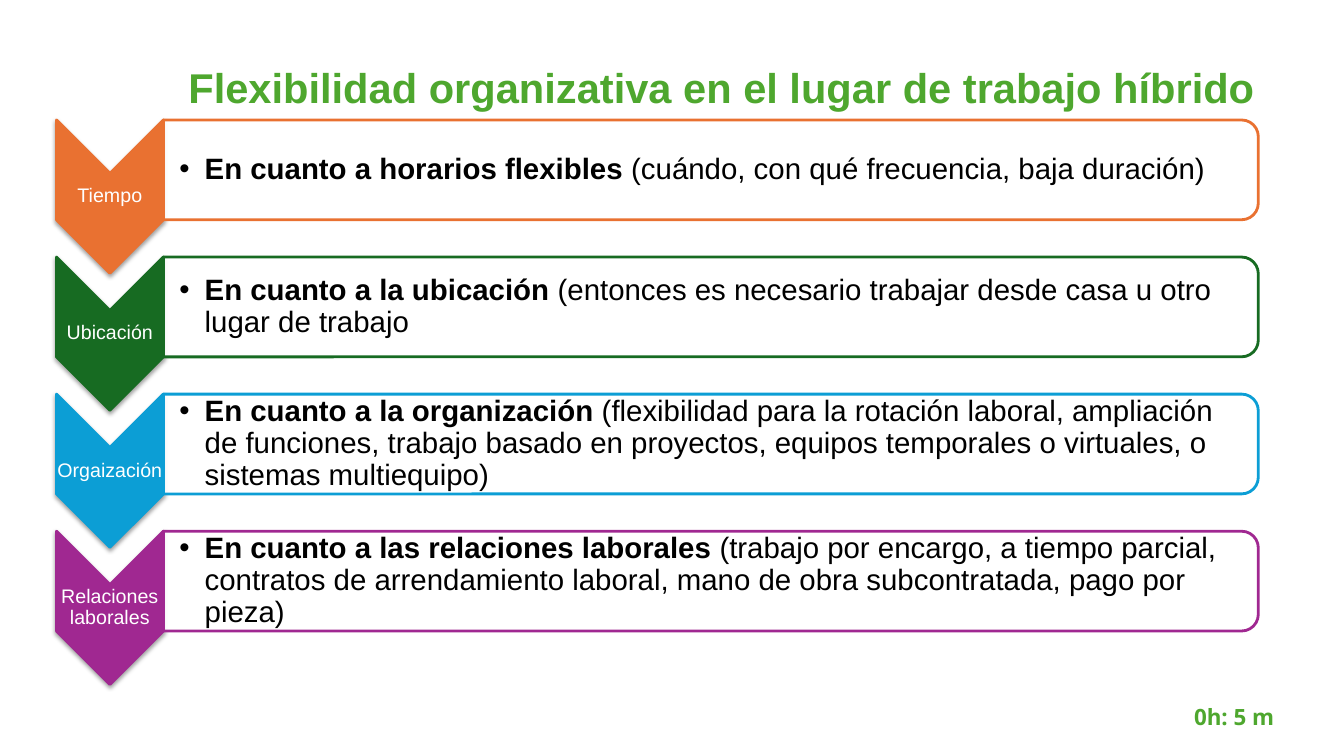
import dataclasses

import pptx
import pptx.dml.color
import pptx.enum.shapes
import pptx.enum.text
import pptx.oxml
import pptx.oxml.ns
import pptx.util

PX = 9144  # EMU per px, 100 px to the inch
NS = pptx.oxml.ns.nsdecls("a")
KINDS = pptx.enum.shapes.MSO_SHAPE
ALIGN = pptx.enum.text.PP_ALIGN
ANCHOR = pptx.enum.text.MSO_ANCHOR


@dataclasses.dataclass(frozen=True)
class Theme:
    font: str = "Arial"
    clock_font: str = "Open Sans"
    green: str = "4EA72E"
    white: str = "FFFFFF"
    black: str = "000000"
    title: float = 29.7
    body: float = 21
    label: float = 14
    clock: float = 16
    line: float = 2
    spacing: float = 0.9


THEME = Theme()

ROWS = [
    ("Tiempo", "E97131", "En cuanto a horarios flexibles ",
     "(cuándo, con qué frecuencia, baja duración)"),
    ("Ubicación", "176B22", "En cuanto a la ubicación ",
     "(entonces es necesario trabajar desde casa u otro lugar de trabajo"),
    ("Orgaización", "0C9ED5", "En cuanto a la organización ",
     "(flexibilidad para la rotación laboral, ampliación de funciones, "
     "trabajo basado en proyectos, equipos temporales o virtuales, "
     "o sistemas multiequipo)"),
    ("Relaciones laborales", "A02891", "En cuanto a las relaciones laborales ",
     "(trabajo por encargo, a tiempo parcial, contratos de arrendamiento "
     "laboral, mano de obra subcontratada, pago por pieza)"),
]


def px(num):
    return pptx.util.Emu(round(num * PX))


def rgb(color):
    return pptx.dml.color.RGBColor.from_string(color)


def style(run, size, color, bold=False, font=THEME.font):
    run.font.name = font
    run.font.size = pptx.util.Pt(size)
    run.font.bold = bold
    run.font.color.rgb = rgb(color)


def add_text(slide, box, text, pad=(1, 1, 1, 1), anchor=ANCHOR.MIDDLE):
    """Add a wrapping text box and return its first paragraph."""
    frame = slide.shapes.add_textbox(*map(px, box)).text_frame
    frame.word_wrap = True
    frame.vertical_anchor = anchor
    (frame.margin_left, frame.margin_top,
     frame.margin_right, frame.margin_bottom) = map(px, pad)
    frame.text = text
    return frame.paragraphs[0]


def add_turned(slide, kind, box, fill, line):
    """Add a shape turned by 90 degrees so that it fills the box as seen."""
    left, top, width, height = box
    shift = (width - height) / 2
    shape = slide.shapes.add_shape(
        kind, px(left + shift), px(top - shift), px(height), px(width))
    shape.rotation = 90
    shape.shadow.inherit = False
    shape.fill.solid()
    shape.fill.fore_color.rgb = rgb(fill)
    shape.line.color.rgb = rgb(line)
    shape.line.width = pptx.util.Pt(THEME.line)
    return shape


def cast_shadow(shape):
    effects = shape.element.spPr.find(pptx.oxml.ns.qn("a:effectLst"))
    effects.append(pptx.oxml.parse_xml(
        f'<a:outerShdw {NS} blurRad="39370" dist="20320" dir="5400000" '
        f'rotWithShape="0"><a:srgbClr val="{THEME.black}">'
        '<a:alpha val="37000"/></a:srgbClr></a:outerShdw>'))


def fade(shape, share):
    color = shape.element.spPr.find(
        pptx.oxml.ns.qn("a:solidFill") + "/" + pptx.oxml.ns.qn("a:srgbClr"))
    color.append(pptx.oxml.parse_xml(
        f'<a:alpha {NS} val="{share * 1000}"/>'))


def add_bullet(para):
    props = para._p.get_or_add_pPr()
    props.set("marL", str(px(25)))
    props.set("indent", str(px(-25)))
    for xml in (f'<a:buClr {NS}><a:srgbClr val="{THEME.black}"/></a:buClr>',
                f'<a:buFont {NS} typeface="{THEME.font}"/>',
                f'<a:buChar {NS} char="•"/>'):
        props.append(pptx.oxml.parse_xml(xml))


def add_arrow(slide, box, label, color):
    left, top, width, height = box
    arrow = add_turned(slide, KINDS.CHEVRON, box, color, color)
    arrow.adjustments[0] = 0.5
    cast_shadow(arrow)
    para = add_text(slide, (left, top + width // 2, width, height - width),
                    label)
    para.alignment = ALIGN.CENTER
    para.line_spacing = THEME.spacing
    style(para.runs[0], THEME.label, THEME.white)


def add_panel(slide, box, lead, rest, color):
    left, top, width, height = box
    panel = add_turned(slide, KINDS.ROUND_2_SAME_RECTANGLE, box,
                       THEME.white, color)
    panel.adjustments[0] = 0.167
    panel.adjustments[1] = 0
    fade(panel, 89)
    para = add_text(slide, (left, top + 5, width - 5, height - 10), lead,
                    pad=(16, 1, 1, 1))
    para.level = 1
    add_bullet(para)
    para.line_spacing = THEME.spacing
    para.add_run().text = rest
    for run, bold in zip(para.runs, (True, False)):
        style(run, THEME.body, THEME.black, bold)


def add_rows(slide, box):
    left, top, width, pitch = box
    arrow = 106
    for i, (label, color, lead, rest) in enumerate(ROWS):
        y = top + i * pitch
        add_arrow(slide, (left, y, arrow, 152), label, color)
        add_panel(slide, (left + arrow, y, width - arrow, 99),
                  lead, rest, color)


def add_title(slide, box):
    para = add_text(slide, box,
                    "Flexibilidad organizativa en el lugar de trabajo híbrido",
                    pad=(10, 0, 10, 0))
    style(para.runs[0], THEME.title, THEME.green, True)


def add_clock(slide, box):
    para = add_text(slide, box, "0h: 5 m", pad=(10, 5, 10, 5),
                    anchor=ANCHOR.TOP)
    para.alignment = ALIGN.CENTER
    style(para.runs[0], THEME.clock, THEME.green, True, THEME.clock_font)


def main():
    deck = pptx.Presentation()
    deck.slide_width, deck.slide_height = px(1333), px(750)
    slide = deck.slides.add_slide(deck.slide_layouts[6])
    add_clock(slide, (1154, 693, 140, 37))
    add_title(slide, (177, 61, 1146, 50))
    add_rows(slide, (56, 119, 1192, 136))
    deck.save("out.pptx")


if __name__ == "__main__":
    main()
